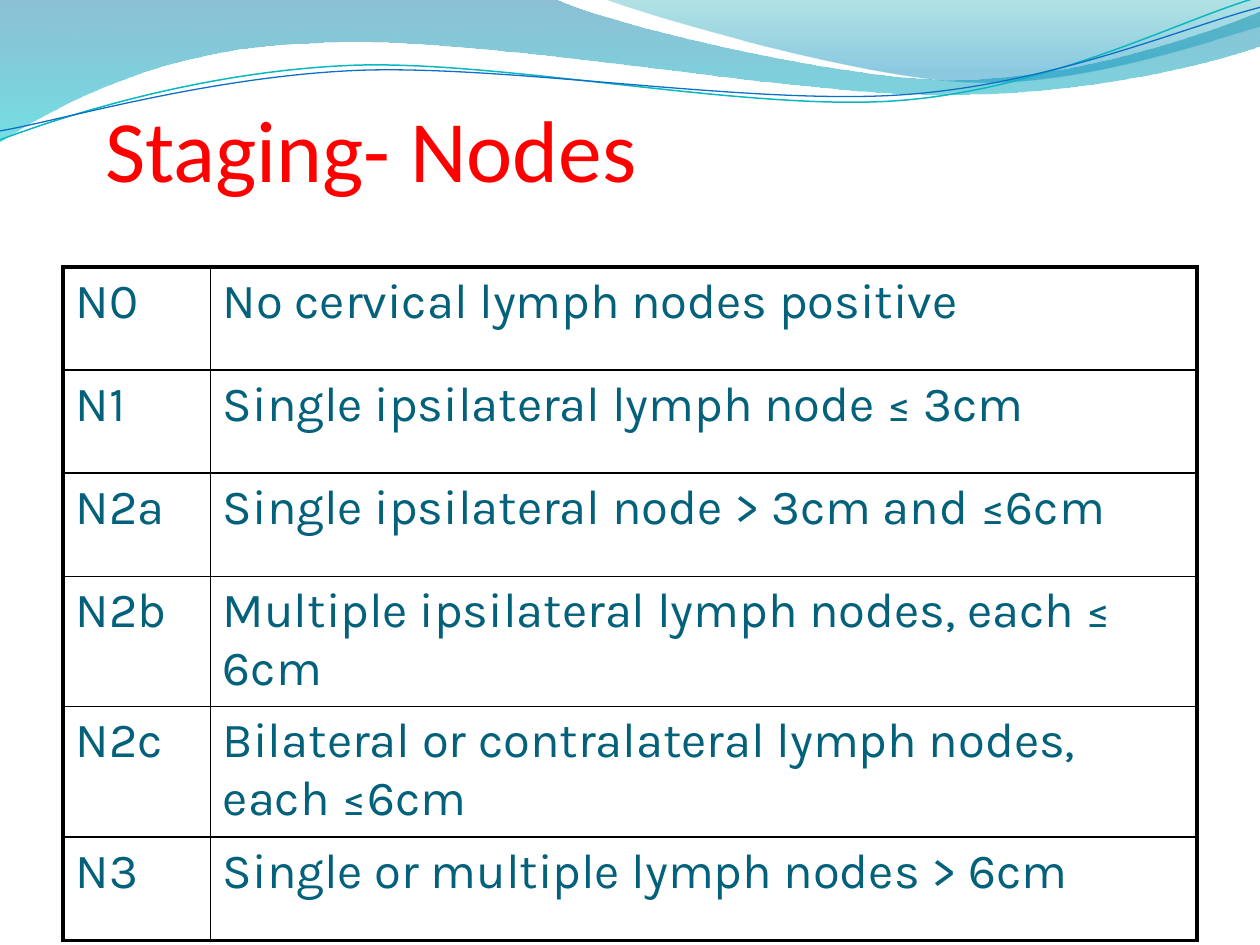
from lxml.etree import SubElement
from pptx import Presentation
from pptx.dml.color import RGBColor
from pptx.enum.text import MSO_ANCHOR, PP_ALIGN
from pptx.oxml.ns import qn
from pptx.util import Cm, Pt

STAGES = [
    ("N0", "No cervical lymph nodes positive"),
    ("N1", "Single ipsilateral lymph node ≤ 3cm"),
    ("N2a", "Single ipsilateral node > 3cm and ≤6cm"),
    ("N2b", "Multiple ipsilateral lymph nodes, each ≤ 6cm"),
    ("N2c", "Bilateral or contralateral lymph nodes, each ≤6cm"),
    ("N3", "Single or multiple lymph nodes > 6cm"),
]

LONG_WAVE = [
    [(0, 0)],
    [(11.18, -0.03)],
    [(12.09, 0.43), (16.87, 1.6), (19.25, 1.6)],
    [(21.67, 1.6), (24.33, 0.66), (25.4, 0.23)],
    [(25.43, 0.91)],
    [(24.97, 1.12), (22.1, 1.93), (18.95, 1.91)],
    [(15.8, 1.91), (9.7, 0.71), (6.53, 0.86)],
    [(3.28, 0.91), (1.17, 2.11), (-0.03, 2.87)],
]
SHORT_WAVE = [
    [(12.17, -0.03)],
    [(12.93, 0.28), (17.32, 1.57), (19.53, 1.65)],
    [(21.74, 1.75), (24.41, 0.81), (25.4, 0.53)],
    [(25.4, 0)],
]
TEAL_LINE = [
    [(0, 2.82)],
    [(1.22, 2.36), (4.01, 1.45), (7.04, 1.32)],
    [(10.03, 1.19), (15.06, 2.26), (18.11, 2.03)],
    [(21.16, 1.8), (23.83, 0.38), (25.35, -0.05)],
]
BLUE_LINE = [
    [(0, 2.64)],
    [(1.19, 2.44), (4.17, 1.55), (7.19, 1.42)],
    [(10.24, 1.3), (15.16, 2.13), (18.21, 1.91)],
    [(21.23, 1.7), (23.9, 0.53), (25.4, 0.15)],
]


def rgb(value):
    return RGBColor.from_string(value)


class Deck:
    title = {"name": "Calibri", "size": Pt(50), "color": "FF0000"}
    body = {"name": "Karla", "size": Pt(28), "color": "04617B"}
    border = "000000"
    thin, thick = Pt(1), Pt(2.25)

    def __init__(self, width, height):
        self.prs = Presentation()
        self.prs.slide_width, self.prs.slide_height = Cm(width), Cm(height)
        self.s = self.prs.slides.add_slide(self.prs.slide_layouts[6])

    def add_text(self, p, text, style):
        r = p.add_run()
        r.text = text
        for key, value in style.items():
            if key == "color":
                r.font.color.rgb = rgb(value)
            else:
                setattr(r.font, key, value)

    def curve(self, segments, close):
        points = [(Cm(x), Cm(y)) for seg in segments for x, y in seg]
        builder = self.s.shapes.build_freeform(*points[0], scale=1.0)
        builder.add_line_segments(points[1:], close=close)
        sp = builder.convert_to_shape()
        sp.shadow.inherit = False
        lines = list(sp.element.iter(qn("a:lnTo")))
        for seg in segments[1:]:
            first, *rest = lines[:len(seg)]
            lines = lines[len(seg):]
            if rest:
                bezier = first.makeelement(qn("a:cubicBezTo"))
                first.addprevious(bezier)
                for line in (first, *rest):
                    bezier.append(line[0])
                    line.getparent().remove(line)
        return sp

    def wave(self, segments, stops):
        sp = self.curve(segments, True)
        sp.line.fill.background()
        sp.fill.gradient()
        sp.fill.gradient_angle = 270
        for stop, (position, color, alpha) in zip(sp.fill.gradient_stops, stops):
            stop.position = position
            stop.color.rgb = rgb(color)
        elements = sp.element.iter(qn("a:gs"))
        for gs, (position, color, alpha) in zip(elements, stops):
            SubElement(gs[0], qn("a:alpha"), val=str(alpha * 1000))

    def stroke(self, segments, color, width):
        sp = self.curve(segments, False)
        sp.fill.background()
        sp.line.color.rgb = rgb(color)
        sp.line.width = Pt(width)

    def heading(self, text, left, top, width, height):
        tf = self.s.shapes.add_textbox(Cm(left), Cm(top), Cm(width), Cm(height)).text_frame
        frame = {"word_wrap": True, "vertical_anchor": MSO_ANCHOR.BOTTOM, "margin_left": 0,
                 "margin_right": 0, "margin_top": Cm(0.13), "margin_bottom": 0}
        for key, value in frame.items():
            setattr(tf, key, value)
        p = tf.paragraphs[0]
        p.alignment = PP_ALIGN.LEFT
        self.add_text(p, text, self.title)

    def borders(self, cell, outer):
        tcPr = cell._tc.get_or_add_tcPr()
        for side, is_outer in outer.items():
            width = self.thick if is_outer else self.thin
            ln = SubElement(tcPr, qn(f"a:ln{side}"), w=str(int(width)))
            fill = SubElement(ln, qn("a:solidFill"))
            SubElement(fill, qn("a:srgbClr"), val=self.border)

    def table(self, rows, left, top, widths, row_height):
        last_row, last_col = len(rows) - 1, len(widths) - 1
        table = self.s.shapes.add_table(
            len(rows), len(widths), Cm(left), Cm(top),
            Cm(sum(widths)), Cm(row_height * len(rows))).table
        table.first_row = table.horz_banding = False
        for column, width in zip(table.columns, widths):
            column.width = Cm(width)
        for i, row in enumerate(rows):
            table.rows[i].height = Cm(row_height)
            for j, text in enumerate(row):
                cell = table.cell(i, j)
                self.borders(cell, {"L": j == 0, "R": j == last_col,
                                    "T": i == 0, "B": i == last_row})
                cell.fill.background()
                self.add_text(cell.text_frame.paragraphs[0], text, self.body)


def main():
    deck = Deck(25.4, 19.05)
    deck.wave(LONG_WAVE, [(0, "0074A1", 45), (1, "00C6CF", 55)])
    deck.wave(SHORT_WAVE, [(0, "00A1A9", 30), (0.8, "008BBF", 45)])
    deck.stroke(TEAL_LINE, "0AB8BF", 0.85)
    deck.stroke(BLUE_LINE, "0F6FC6", 0.75)
    deck.heading("Staging- Nodes", 2.12, 0.85, 21.59, 3.18)
    deck.table(STAGES, 1.27, 5.38, [2.97, 19.89], 2.08)
    deck.prs.save("out.pptx")


if __name__ == "__main__":
    main()
